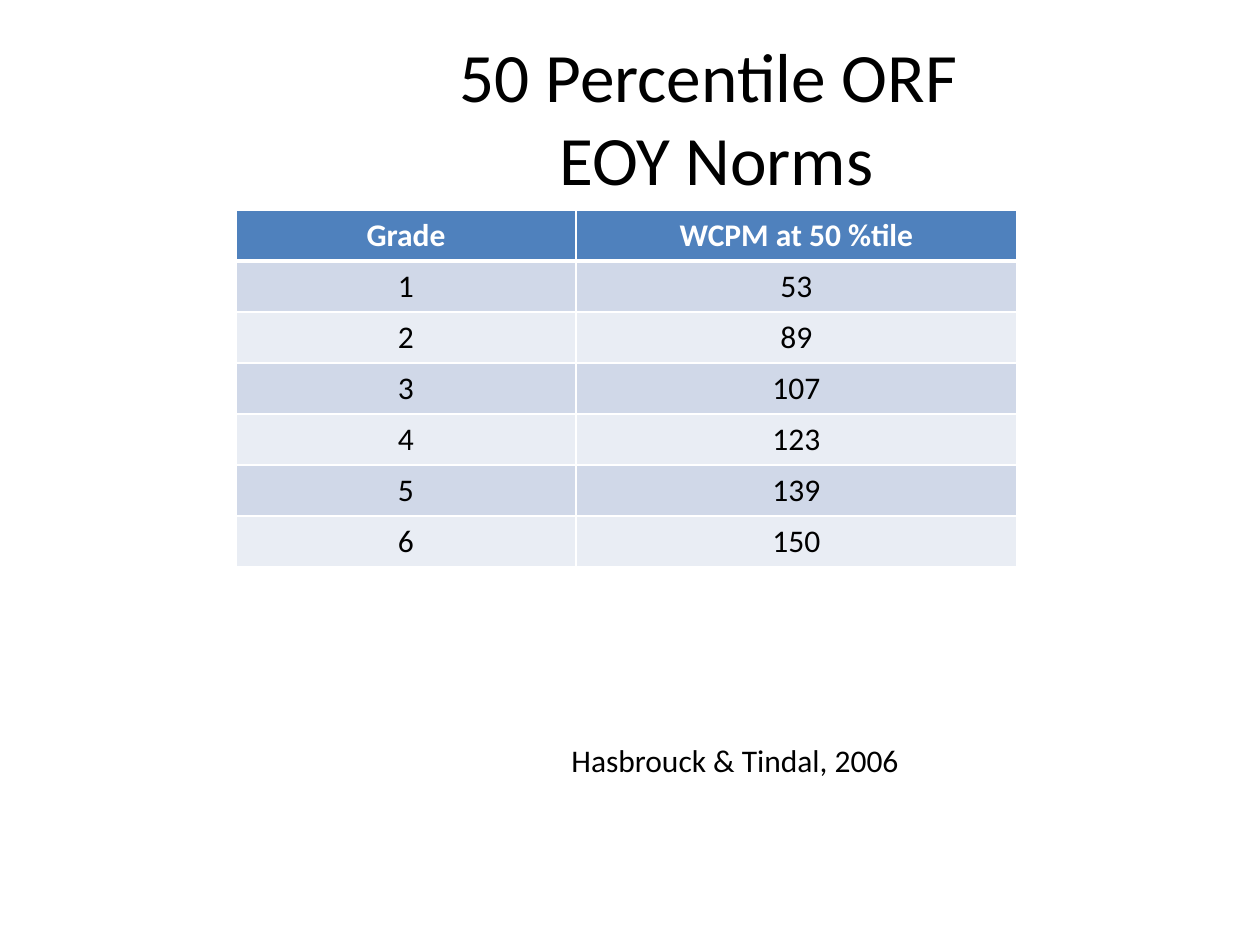
from lxml.etree import SubElement
from pptx import Presentation
from pptx.dml.color import RGBColor as Rgb
from pptx.enum.text import MSO_ANCHOR as Anchor, PP_ALIGN as Align
from pptx.oxml.ns import qn
from pptx.util import Emu, Pt

EMU_PER_PX = 914400 / 126
COLORS = {
    "text": "000000",
    "white": "FFFFFF",
    "header": "4F81BD",
    "odd": "D0D8E8",
    "even": "E9EDF4",
}
NORMS = [
    ("Grade", "WCPM at 50 %tile"),
    ("1", "53"),
    ("2", "89"),
    ("3", "107"),
    ("4", "123"),
    ("5", "139"),
    ("6", "150"),
]


def px(length):
    return Emu(round(length * EMU_PER_PX))


class SlideBuilder:
    font_name = "Calibri"

    def __init__(self, page):
        self.page = page

    def fill_text(self, frame, text, size=18, color="text", bold=False, align=Align.LEFT):
        para = frame.paragraphs[0]
        para.text = text
        para.alignment = align
        style = {"name": self.font_name, "size": Pt(size), "bold": bold}
        for span in para.runs:
            for name, value in style.items():
                setattr(span.font, name, value)
            span.font.color.rgb = Rgb.from_string(COLORS[color])

    def text(self, place, text, wrap=True, anchor=Anchor.TOP, **style):
        box = self.page.shapes.add_textbox(*map(px, place))
        box.text_frame.word_wrap = wrap
        box.text_frame.vertical_anchor = anchor
        self.fill_text(box.text_frame, text, **style)

    def borders(self, cell, widths):
        props = cell._tc.get_or_add_tcPr()
        for side, width in widths.items():
            line = SubElement(props, qn(f"a:ln{side}"), w=str(Pt(width)))
            fill = SubElement(line, qn("a:solidFill"))
            SubElement(fill, qn("a:srgbClr"), val=COLORS["white"])

    def table(self, left, top, widths, row_height, rows):
        place = (left, top, sum(widths), row_height * len(rows))
        table = self.page.shapes.add_table(len(rows), len(widths), *map(px, place)).table
        for column, width in zip(table.columns, widths):
            column.width = px(width)
        for r, values in enumerate(rows):
            table.rows[r].height = px(row_height)
            header = r == 0
            fill = "header" if header else "odd" if r % 2 else "even"
            # The rule under the header is heavier than the grid
            edges = {"L": 1, "R": 1, "T": 3 if r == 1 else 1, "B": 3 if header else 1}
            for c, value in enumerate(values):
                cell = table.cell(r, c)
                self.borders(cell, edges)
                cell.fill.solid()
                cell.fill.fore_color.rgb = Rgb.from_string(COLORS[fill])
                self.fill_text(cell.text_frame, value, bold=header, align=Align.CENTER,
                               color="white" if header else "text")


def main():
    deck = Presentation()
    deck.slide_width, deck.slide_height = px(1260), px(945)
    builder = SlideBuilder(deck.slides.add_slide(deck.slide_layouts[6]))

    # Title
    builder.text((236, 38, 961, 157), "50 Percentile ORF \vEOY Norms",
                 anchor=Anchor.MIDDLE, size=39.6, align=Align.CENTER)

    # Norms by grade
    builder.table(236, 210, (340, 441), 51, NORMS)

    # Citation
    builder.text((559, 735, 357, 50), "Hasbrouck & Tindal, 2006", wrap=False)

    deck.save("out.pptx")


if __name__ == "__main__":
    main()
